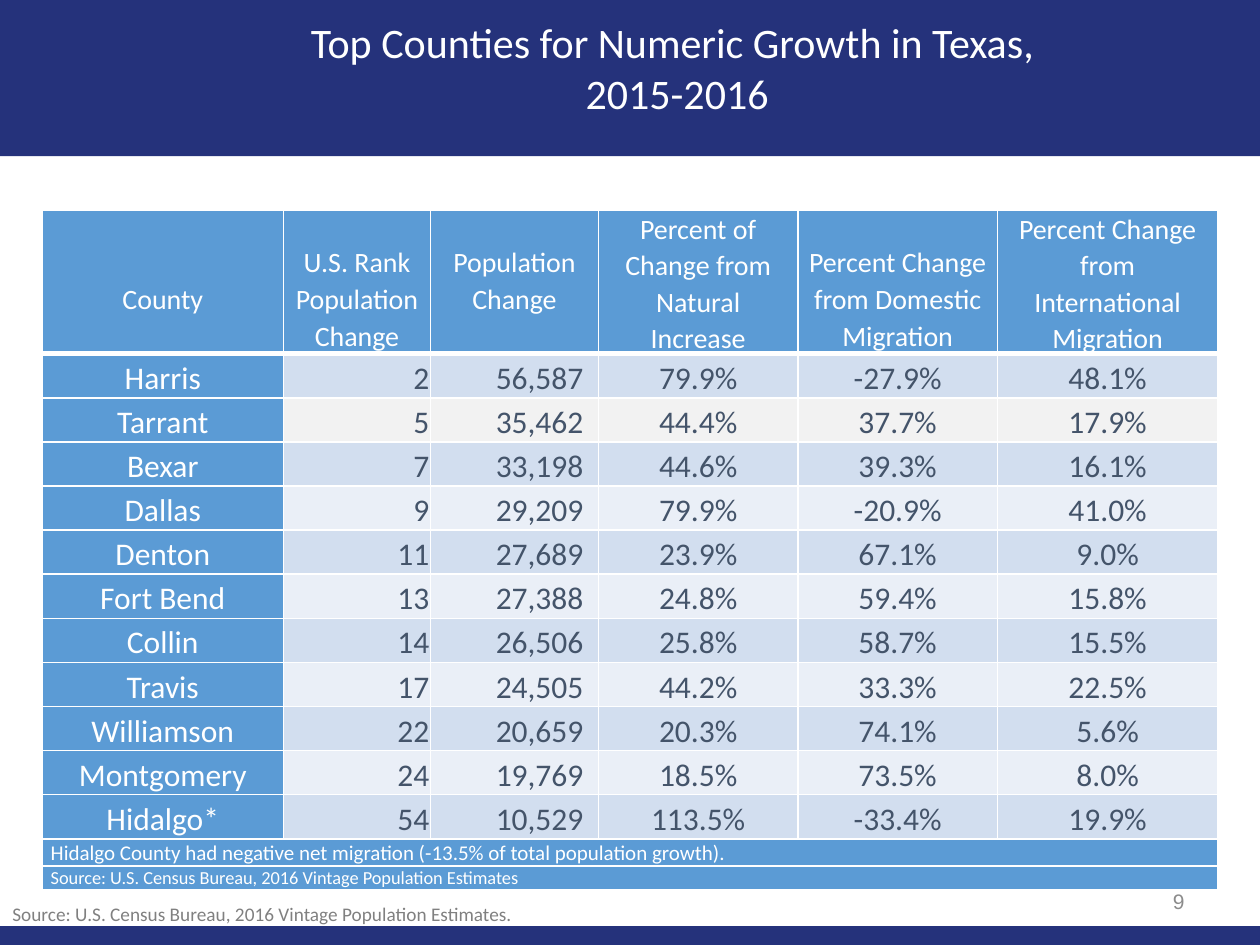
from dataclasses import dataclass
from lxml.etree import SubElement
from pptx import Presentation
from pptx.dml.color import RGBColor
from pptx.enum.shapes import MSO_SHAPE
from pptx.enum.text import MSO_ANCHOR, PP_ALIGN
from pptx.oxml.ns import qn
from pptx.util import Pt

LEFT, MID, RIGHT = PP_ALIGN.LEFT, PP_ALIGN.CENTER, PP_ALIGN.RIGHT


@dataclass(frozen=True)
class Theme:
    font: str = "Calibri"
    plain: str = "Arial"
    navy: str = "25327B"
    blue: str = "5B9BD5"
    white: str = "FFFFFF"
    ink: str = "44546A"
    dark: str = "D2DEEF"
    light: str = "EAEFF7"
    pale: str = "F2F2F2"
    gray: str = "808080"
    page: str = "8C8C8C"
    title: float = 24
    head: float = 16
    body: float = 18
    note: float = 12
    source: float = 10.5
    foot: float = 11


THEME = Theme()
WIDE, HIGH = 720, 540
COLS = [138, 84, 96, 114, 114, 126]
HEAD_ROW, BODY_ROW, NOTE_ROW = 62.6, 25.2, 13.7
HEADS = ["County", "U.S. Rank Population Change", "Population Change",
         "Percent of Change from Natural Increase",
         "Percent Change from Domestic Migration",
         "Percent Change from International Migration"]
RAISED = {"County", "Population Change"}
DATA = [
    ("Harris", "2", "56,587", "79.9%", "-27.9%", "48.1%"),
    ("Tarrant", "5", "35,462", "44.4%", "37.7%", "17.9%"),
    ("Bexar", "7", "33,198", "44.6%", "39.3%", "16.1%"),
    ("Dallas", "9", "29,209", "79.9%", "-20.9%", "41.0%"),
    ("Denton", "11", "27,689", "23.9%", "67.1%", "9.0%"),
    ("Fort Bend", "13", "27,388", "24.8%", "59.4%", "15.8%"),
    ("Collin", "14", "26,506", "25.8%", "58.7%", "15.5%"),
    ("Travis", "17", "24,505", "44.2%", "33.3%", "22.5%"),
    ("Williamson", "22", "20,659", "20.3%", "74.1%", "5.6%"),
    ("Montgomery", "24", "19,769", "18.5%", "73.5%", "8.0%"),
    ("Hidalgo*", "54", "10,529", "113.5%", "-33.4%", "19.9%"),
]
NOTES = [
    ("Hidalgo County had negative net migration (-13.5% of total population growth).",
     THEME.note),
    ("Source: U.S. Census Bureau, 2016 Vintage Population Estimates", THEME.source),
]


def style(para, size, color, align, font=THEME.font):
    para.alignment = align
    para.font.size = Pt(size)
    para.font.name = font
    para.font.color.rgb = RGBColor.from_string(color)


def add_band(slide, top, height):
    band = slide.shapes.add_shape(MSO_SHAPE.RECTANGLE, 0, Pt(top), Pt(WIDE), Pt(height))
    band.shadow.inherit = False
    band.fill.solid()
    band.fill.fore_color.rgb = RGBColor.from_string(THEME.navy)
    band.line.fill.background()


def add_text(slide, area, lines, size, color, align, font=THEME.font,
             anchor=MSO_ANCHOR.TOP, wrap=True):
    frame = slide.shapes.add_textbox(*map(Pt, area)).text_frame
    frame.word_wrap = wrap
    frame.vertical_anchor = anchor
    frame.text = "\n".join(lines)
    for para in frame.paragraphs:
        style(para, size, color, align, font)


def add_edge(cell, side, width):
    line = SubElement(cell._tc.get_or_add_tcPr(), qn(f"a:ln{side}"), w=str(Pt(width)))
    fill = SubElement(line, qn("a:solidFill"))
    SubElement(fill, qn("a:srgbClr"), val=THEME.white)


def set_cell(cell, text, size, color, fill, align, inset, base=1, space=None):
    for side in "LRT":
        add_edge(cell, side, 1)
    add_edge(cell, "B", base)
    cell.fill.solid()
    cell.fill.fore_color.rgb = RGBColor.from_string(fill)
    cell.vertical_anchor = MSO_ANCHOR.BOTTOM
    (cell.margin_left, cell.margin_top,
     cell.margin_right, cell.margin_bottom) = map(Pt, inset)
    cell.text = text
    para = cell.text_frame.paragraphs[0]
    style(para, size, color, align)
    if space:
        para.line_spacing = space


def fill_head(table):
    for col, text in enumerate(HEADS):
        lift = 21 if text in RAISED else 0
        set_cell(table.cell(0, col), text, THEME.head, THEME.white, THEME.blue,
                 MID, (5, 0, 5, lift), 3, 1.07)


def fill_body(table):
    aligns = [MID, RIGHT, RIGHT, MID, MID, MID]
    for row, data in enumerate(DATA, 1):
        shade = THEME.dark if row % 2 else THEME.light
        if data[0] == "Tarrant":
            shade = THEME.pale
        for col, text in enumerate(data):
            edge = 0.7 if col < 3 else 0
            right = 8.6 if col == 2 else edge
            color, fill = (THEME.ink, shade) if col else (THEME.white, THEME.blue)
            set_cell(table.cell(row, col), text, THEME.body, color, fill,
                     aligns[col], (edge, edge, right, 0))


def fill_notes(table):
    for row, (text, size) in enumerate(NOTES, len(DATA) + 1):
        cell = table.cell(row, 0)
        cell.merge(table.cell(row, len(COLS) - 1))
        set_cell(cell, text, size, THEME.white, THEME.blue, LEFT, (5, 0, 5, 0), 1, 1.07)


def add_grid(slide):
    rows = [HEAD_ROW] + [BODY_ROW] * len(DATA) + [NOTE_ROW] * len(NOTES)
    shape = slide.shapes.add_table(len(rows), len(COLS), Pt(24), Pt(120),
                                   Pt(sum(COLS)), Pt(sum(rows)))
    table = shape.table
    table.first_row = table.horz_banding = False
    for col, width in zip(table.columns, COLS):
        col.width = Pt(width)
    for row, height in zip(table.rows, rows):
        row.height = Pt(height)
    fill_head(table)
    fill_body(table)
    fill_notes(table)
    shape.height = Pt(388.8)


def main():
    deck = Presentation()
    deck.slide_width, deck.slide_height = Pt(WIDE), Pt(HIGH)
    slide = deck.slides.add_slide(deck.slide_layouts[6])
    add_band(slide, 0, 89.3)
    add_band(slide, 529.2, 10.8)
    add_text(slide, (138, 6, 498, 65.5),
             ["Top Counties for Numeric Growth in Texas, ", "2015-2016"],
             THEME.title, THEME.white, MID)
    add_text(slide, (516, 500.5, 168, 28.8), ["9"], THEME.note, THEME.page, RIGHT,
             THEME.plain, MSO_ANCHOR.MIDDLE)
    add_text(slide, (0, 512, 305, 20.6),
             ["Source: U.S. Census Bureau, 2016 Vintage Population Estimates."],
             THEME.foot, THEME.gray, LEFT, wrap=False)
    add_grid(slide)
    deck.save("out.pptx")


if __name__ == "__main__":
    main()
